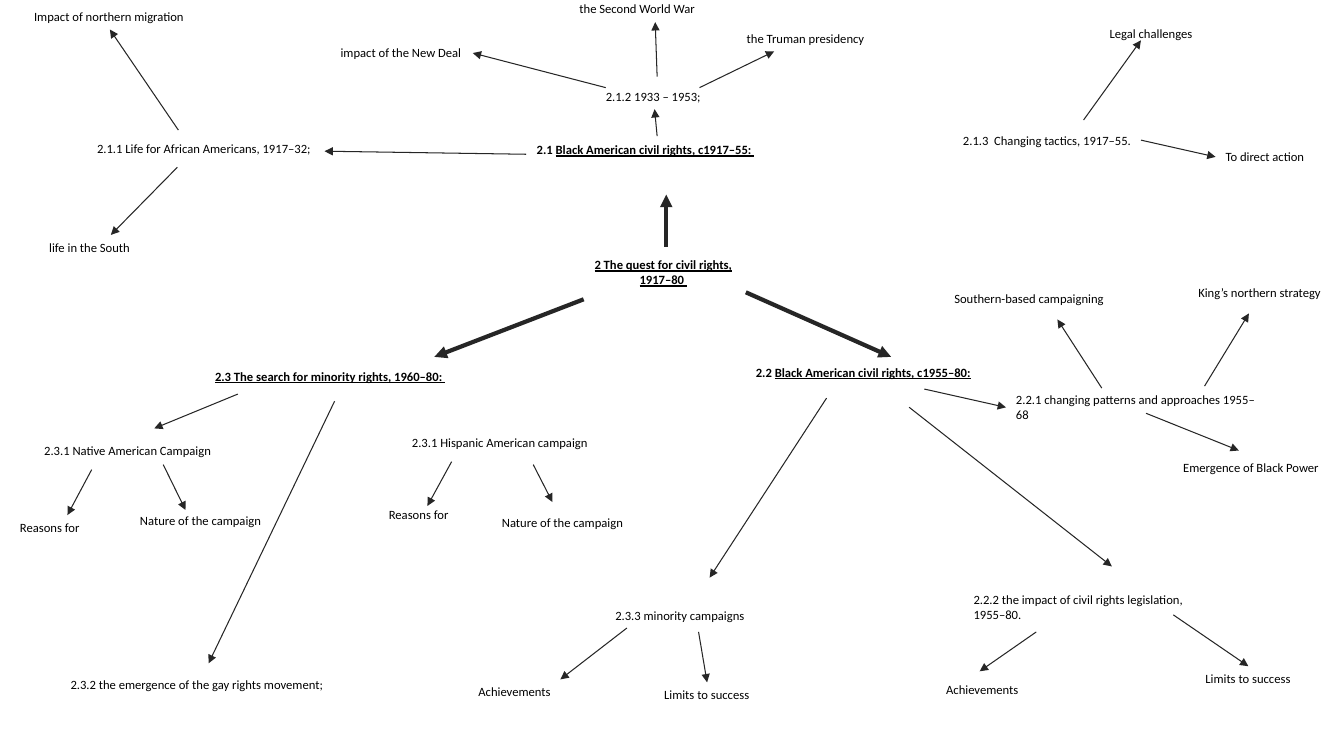
from dataclasses import dataclass
from lxml import etree
from pptx import Presentation
from pptx.dml.color import RGBColor
from pptx.enum.shapes import MSO_CONNECTOR
from pptx.enum.text import MSO_ANCHOR, MSO_AUTO_SIZE, PP_ALIGN
from pptx.oxml.ns import qn
from pptx.util import Pt

LEFT, CENTER = PP_ALIGN.LEFT, PP_ALIGN.CENTER
GROW, TOP = MSO_AUTO_SIZE.SHAPE_TO_FIT_TEXT, MSO_ANCHOR.TOP
STRAIGHT = MSO_CONNECTOR.STRAIGHT


@dataclass
class Theme:
    font: str = "Calibri"
    size: float = 9
    ink: RGBColor = RGBColor(0, 0, 0)
    line: RGBColor = RGBColor(0x26, 0x26, 0x26)
    thin: float = 0.75
    thick: float = 3
    row: float = 18.2
    tall: float = 29


theme = Theme()


def write(shape, text, lead="", head=False, wrap=False, align=LEFT):
    frame = shape.text_frame
    frame.word_wrap = wrap
    frame.auto_size = GROW
    frame.vertical_anchor = TOP
    para = frame.paragraphs[0]
    para.alignment = align
    for part, under in ((lead, False), (text, head)):
        if part:
            run = para.add_run()
            run.text = part
            font = run.font
            font.name, font.size = theme.font, Pt(theme.size)
            font.color.rgb = theme.ink
            font.bold, font.underline = head, under


def arrow(start, end, width):
    link = slide.shapes.add_connector(STRAIGHT, *map(Pt, start + end))
    link.line.color.rgb = theme.line
    link.line.width = Pt(width)
    props = link.line._get_or_add_ln()
    etree.SubElement(props, qn("a:tailEnd"), type="triangle")
    etree.SubElement(link._element.spPr, qn("a:effectLst"))
    return link


deck = Presentation()
deck.slide_width, deck.slide_height = Pt(960), Pt(540)
slide = deck.slides.add_slide(deck.slide_layouts[5])

title = slide.shapes.title
title.left, title.top = Pt(406.8), Pt(180)
title.width, title.height = Pt(133.9), Pt(theme.tall)
write(title, "2 The quest for civil rights, 1917–80 ", head=True, wrap=True, align=CENTER)

mid = dict(wrap=True, align=CENTER)
topics = [
    ("2.1", "Black American civil rights, c1917–55: ", 221, 97.9, 480.2,
     dict(lead="2.1 ", head=True, **mid)),
    ("2.1.3", "2.1.3  Changing tactics, 1917–55. ", 637.9, 91.4, 221.8, mid),
    ("2.1.1", "2.1.1 Life for African Americans, 1917–32; ", 31, 97.2, 231.1, mid),
    ("2.1.2", "2.1.2 1933 – 1953; ", 227.5, 59.8, 480.2, mid),
    ("2.3", "2.3 The search for minority rights, 1960–80: ", 145.4, 259.9, 180.7,
     dict(head=True, align=CENTER)),
    ("hispanic", "2.3.1 Hispanic American campaign ", 196.6, 307.4, 322.6, mid),
    ("2.3.2", "2.3.2 the emergence of the gay rights movement; ", 41.8, 480.2, 199.4,
     dict(align=CENTER)),
    ("2.3.3", "2.3.3 minority campaigns", 245.5, 430.6, 480.2, mid),
    ("2.2", "Black American civil rights, c1955–80:", 532.8, 257, 169.2,
     dict(lead="2.2 ", head=True)),
    ("2.2.2", "2.2.2 the impact of civil rights legislation, 1955–80.", 688.3, 419, 171.4,
     dict(wrap=True)),
    ("2.2.1", "2.2.1 changing patterns and approaches 1955–68", 718.6, 276.5, 193,
     dict(wrap=True)),
    ("south", "Southern-based campaigning", 674.6, 204.5, 122.4, {}),
    ("power", "Emergence of Black Power", 838.1, 324.7, 114.5, {}),
    ("king", "King’s northern strategy", 848.9, 200.2, 103.7, {}),
    ("law gains", " Achievements", 666.7, 483.8, 71.3, {}),
    ("law limits", "Limits to success", 853.9, 475.9, 75.6, {}),
    ("gains", " Achievements", 332.6, 485.3, 71.3, {}),
    ("limits", "Limits to success", 467.3, 487.4, 75.6, {}),
    ("native", "2.3.1 Native American Campaign", 24.5, 312.5, 134.6, {}),
    ("native why", "Reasons for", 7.2, 367.9, 57.6, {}),
    ("native how", "Nature of the campaign", 92.9, 362.9, 102.2, {}),
    ("hispanic why", "Reasons for", 270.7, 358.6, 57.6, {}),
    ("hispanic how", "Nature of the campaign", 351.4, 364.3, 102.2, {}),
    ("north", "Impact of northern migration", 17.3, 2.9, 122.4, {}),
    ("deal", "impact of the New Deal", 236.2, 28.8, 101.5, {}),
    ("war", "the Second World War", 406.8, -2.9, 100.1, {}),
    ("truman", "the Truman presidency", 526.3, 18.7, 100.1, {}),
    ("legal", "Legal challenges", 785.5, 15.1, 76.3, {}),
    ("direct", "To direct action", 868.3, 103, 72, {}),
    ("life", "life in the South", 28.1, 167.8, 74.9, {}),
]
boxes = {}
for key, text, left, top, width, style in topics:
    high = theme.tall if key in ("2.2.1", "2.2.2") else theme.row
    boxes[key] = slide.shapes.add_textbox(Pt(left), Pt(top), Pt(width), Pt(high))
    write(boxes[key], text, **style)

trunks = [
    ((416.9, 213.8), (310.3, 254.9)),
    ((532.8, 208.8), (636.5, 254.9)),
    ((475.9, 176.4), (475.9, 139)),
]
twigs = [
    ((375.8, 110.2), (231.8, 108)),
    ((126.7, 119.5), (79.2, 167.8)),
    ((469.4, 54.7), (468, 15.8)),
    ((499.7, 62.6), (553, 36.7)),
    ((774, 85.7), (815, 28.8)),
    ((649.4, 290.9), (794.2, 404.6)),
    ((590.4, 284.4), (506.9, 412.6)),
    ((447.8, 448.6), (400.3, 485.3)),
    ((740.2, 451.4), (699.8, 479.5)),
    ((818.6, 295.2), (884.9, 321.8)),
    ((787, 277.2), (755.3, 228.2)),
    ((860.4, 275.8), (892.1, 223.9)),
    ((239, 286.6), (149, 473.8)),
    ((169.9, 281.5), (110.2, 306)),
    ((65.5, 335.5), (48.2, 367.9)),
    ((116.6, 331.9), (132.5, 364.3)),
    ((322.6, 329.8), (305.3, 361.4)),
    ((380.9, 331.9), (394.6, 358.6)),
]
for group, width in ((trunks, theme.thick), (twigs, theme.thin)):
    for start, end in group:
        arrow(start, end, width)

joins = [
    ((469.4, 97.2), "2.1.2", 2),
    ((660.2, 277.9), "2.2.1", 1),
    ((127.4, 92.9), "north", 2),
    ((432.7, 62.6), "deal", 3),
    ((815, 100.1), "direct", 1),
    ((499, 451.4), "limits", 0),
    ((838.1, 439.2), "law limits", 0),
]
for start, key, side in joins:
    arrow(start, start, theme.thin).end_connect(boxes[key], side)

deck.save("out.pptx")
